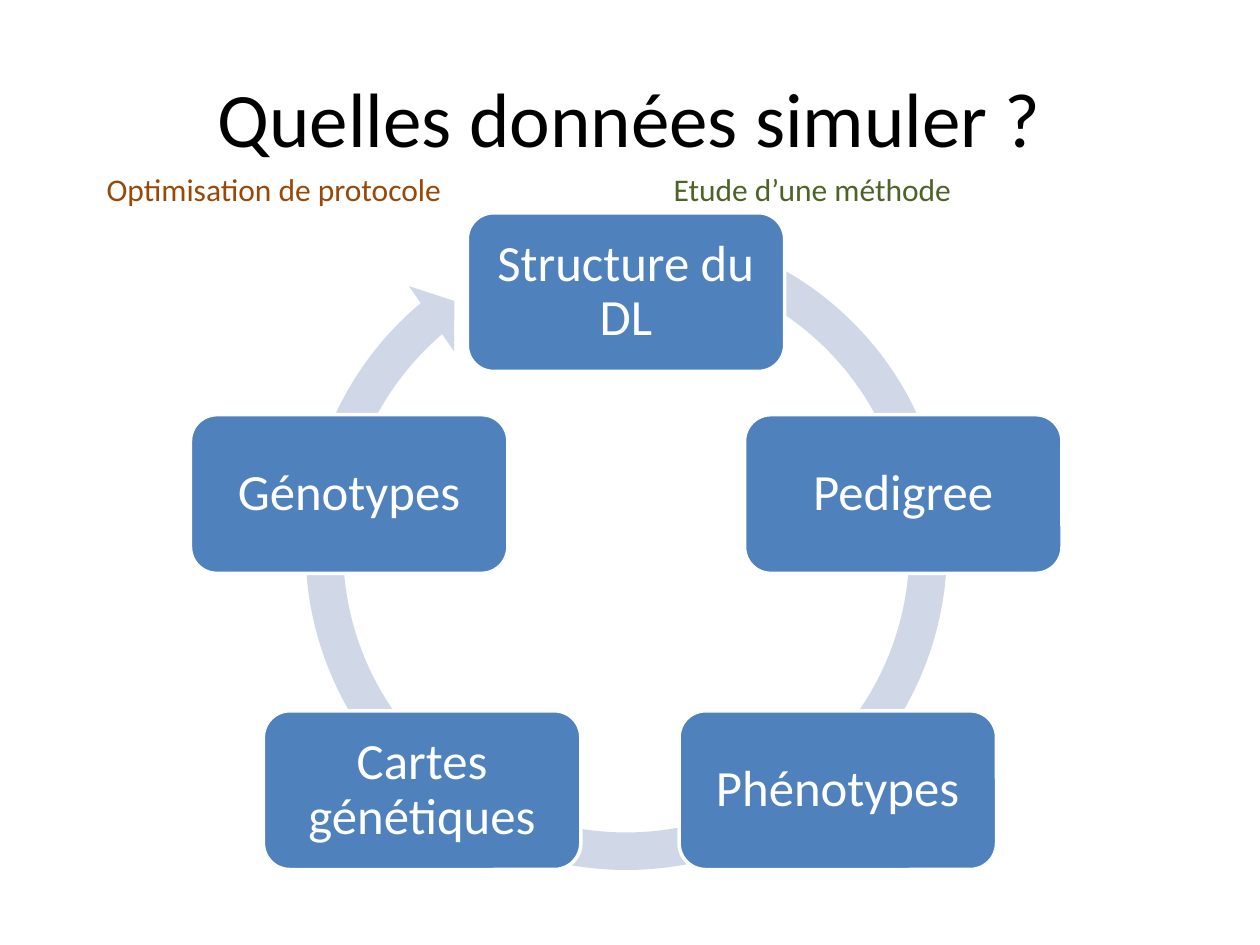
import pptx
import pptx.dml.color
import pptx.enum.shapes
import pptx.enum.text
import pptx.util
from pptx.util import Cm, Pt

SHAPES = pptx.enum.shapes.MSO_SHAPE
CENTER = pptx.enum.text.PP_ALIGN.CENTER
MIDDLE = pptx.enum.text.MSO_ANCHOR.MIDDLE

STEP_WIDTH, STEP_HEIGHT = 6.4, 3.2
STEP_FRAME = {"word_wrap": True, "vertical_anchor": MIDDLE,
              "margin_left": Cm(0.15), "margin_right": Cm(0.15),
              "margin_top": Cm(0.15), "margin_bottom": Cm(0.15)}
STEP_PARA = {"alignment": CENTER, "line_spacing": 0.9, "space_after": Pt(10)}
# Left and top of each step, clockwise from the top of the cycle
STEPS = [
    ("Structure du DL", 9.42, 4.29),
    ("Pedigree", 15.01, 8.36),
    ("Phénotypes", 13.69, 14.33),
    ("Cartes génétiques", 5.31, 14.33),
    ("Génotypes", 3.84, 8.36),
]


def color(value):
    return pptx.dml.color.RGBColor.from_string(value)


def apply_format(target, values):
    for name, value in values.items():
        setattr(target, name, value)


def write_text(box, spans, size, frame_format, para_format):
    """Fill the box with one paragraph of (text, colour) spans."""
    apply_format(box.text_frame, frame_format)
    para = box.text_frame.paragraphs[0]
    apply_format(para, para_format)
    for text, text_color in spans:
        span = para.add_run()
        span.text = text
        apply_format(span.font, {"name": "Calibri", "size": Pt(size)})
        span.font.color.rgb = color(text_color)


def add_text(page, left, top, width, height, spans, size, frame_format, para_format):
    box = page.shapes.add_textbox(Cm(left), Cm(top), Cm(width), Cm(height))
    write_text(box, spans, size, {"word_wrap": True, **frame_format}, para_format)


def add_filled_shape(page, kind, left, top, width, height, fill):
    shape = page.shapes.add_shape(kind, Cm(left), Cm(top), Cm(width), Cm(height))
    shape.shadow.inherit = False
    shape.fill.solid()
    shape.fill.fore_color.rgb = color(fill)
    shape.line.fill.background()
    return shape


def add_cycle_arrow(page):
    arrow = add_filled_shape(page, SHAPES.CIRCULAR_ARROW, 5.74, 4.19, 13.77, 13.77, "D0D8E8")
    for index, value in enumerate((0.055, 3.307, 137.892, 173.779, 0.058)):
        arrow.adjustments[index] = value


def add_step(page, text, left, top):
    box = add_filled_shape(page, SHAPES.ROUNDED_RECTANGLE, left, top,
                           STEP_WIDTH, STEP_HEIGHT, "4F81BD")
    box.line.color.rgb = color("FFFFFF")
    box.line.width = Pt(2)
    write_text(box, [(text, "FFFFFF")], 29, STEP_FRAME, STEP_PARA)


def main():
    deck = pptx.Presentation()
    apply_format(deck, {"slide_width": Cm(25.4), "slide_height": Cm(19.05)})
    page = deck.slides.add_slide(deck.slide_layouts[6])

    add_text(page, 1.27, 0.76, 22.86, 3.18, [("Quelles données simuler ?", "000000")],
             44, {"vertical_anchor": MIDDLE}, {"alignment": CENTER})
    add_cycle_arrow(page)
    for text, left, top in STEPS:
        add_step(page, text, left, top)
    add_text(page, 1.9, 3.3, 21.59, 1.03,
             [("Optimisation de protocole\t\t\t\t", "984807"),
              ("Etude d’une méthode", "4F6228")], 18, {}, {})

    deck.save("out.pptx")


if __name__ == "__main__":
    main()
